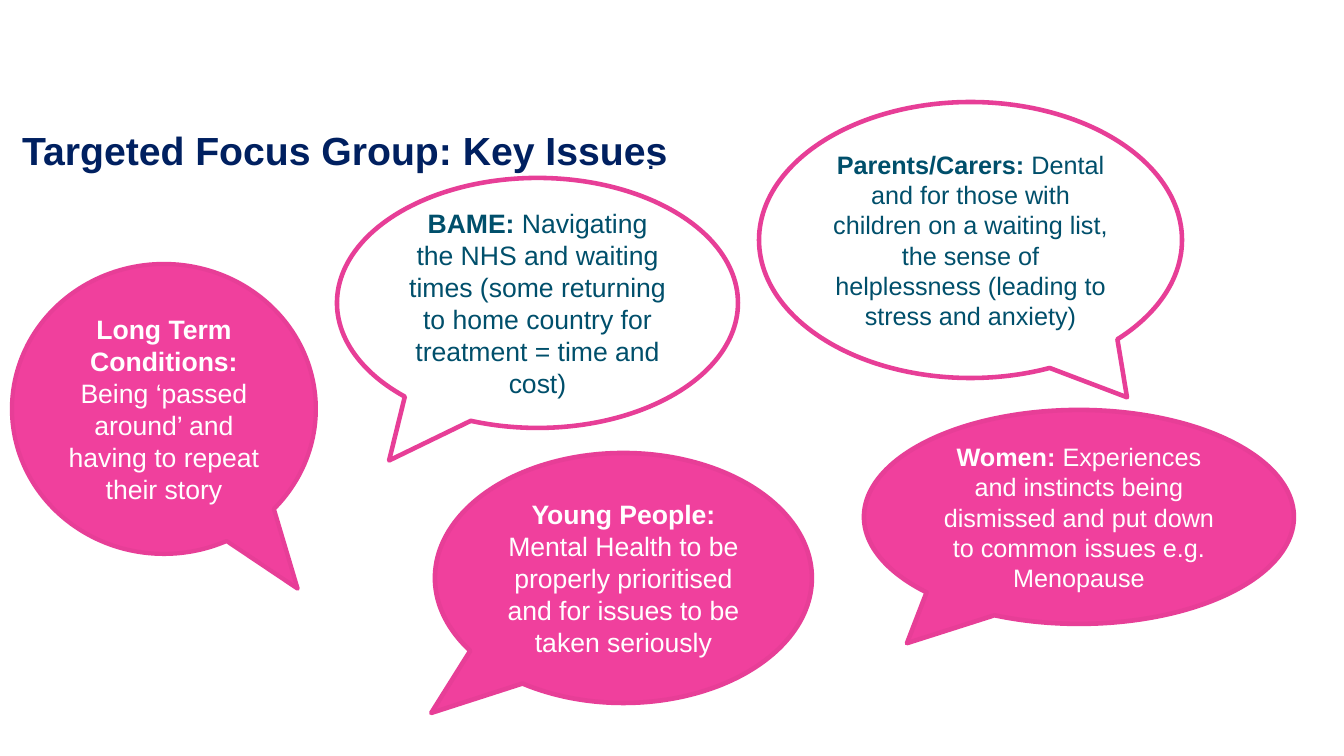
import pptx
import pptx.dml.color
import pptx.enum.shapes
import pptx.enum.text
import pptx.util

SCALE = 914400 / 100.8
NAVY, TEAL, WHITE = "002060", "004F6B", "FFFFFF"
PINK, EDGE = "F0409D", "E73E97"
ALIGN = pptx.enum.text.PP_ALIGN
ANCHOR = pptx.enum.text.MSO_ANCHOR

# Head, body, box, tail point, size, fill, edge width
BUBBLES = [
    ("Women: ", "Experiences and instincts being dismissed and put down to "
     "common issues e.g. Menopause",
     (864, 410, 430, 214), (-0.4, 0.59), 18, PINK, 3.25),
    ("Long Term Conditions: ", "Being ‘passed around’ and having to repeat "
     "their story",
     (12, 264, 304, 290), (0.44, 0.62), 19, PINK, 3),
    ("BAME: ", "Navigating the NHS and waiting times (some returning to home "
     "country for treatment = time and cost)",
     (337, 178, 401, 250), (-0.37, 0.63), 19, None, 3.25),
    ("Young People: ", "Mental Health to be properly prioritised and for "
     "issues to be taken seriously",
     (435, 453, 377, 250), (-0.51, 0.54), 19, PINK, 3.25),
    ("Parents/Carers: ", "Dental and for those with children on a waiting "
     "list, the sense of helplessness (leading to stress and anxiety)",
     (759, 102, 423, 276), (0.37, 0.57), 18, None, 3.25),
]


def px(n):
    return pptx.util.Emu(round(n * SCALE))


def rgb(code):
    return pptx.dml.color.RGBColor.from_string(code)


def style(run, size, color, bold, face="Arial"):
    run.font.name = face
    run.font.size = pptx.util.Pt(size)
    run.font.bold = bold
    run.font.color.rgb = rgb(color)


def add_title(slide, text, box):
    title = slide.shapes.title
    title.left, title.top, title.width, title.height = map(px, box)
    frame = title.text_frame
    frame.text = text
    frame.vertical_anchor = ANCHOR.MIDDLE
    para = frame.paragraphs[0]
    para.alignment = ALIGN.LEFT
    para.line_spacing = 0.9
    style(para.runs[0], 28, NAVY, True)


def add_dot(slide, box):
    frame = slide.shapes.add_textbox(*map(px, box)).text_frame
    frame.word_wrap = True
    frame.margin_top = 0
    frame.text = "."
    para = frame.paragraphs[0]
    para.alignment = ALIGN.CENTER
    style(para.runs[0], 19, NAVY, True, "Manrope")


def add_bubble(slide, head, body, box, tail, size, fill, edge):
    kind = pptx.enum.shapes.MSO_SHAPE.OVAL_CALLOUT
    shape = slide.shapes.add_shape(kind, *map(px, box))
    shape.adjustments[0], shape.adjustments[1] = tail
    shape.shadow.inherit = False
    if fill:
        shape.fill.solid()
        shape.fill.fore_color.rgb = rgb(fill)
    else:
        shape.fill.background()
    shape.line.color.rgb = rgb(EDGE)
    shape.line.width = pptx.util.Pt(edge)

    # Bold group name, then its issue
    frame = shape.text_frame
    frame.word_wrap = True
    frame.vertical_anchor = ANCHOR.MIDDLE
    para = frame.paragraphs[0]
    para.alignment = ALIGN.CENTER
    for text, bold in ((head, True), (body, False)):
        run = para.add_run()
        run.text = text
        style(run, size, WHITE if fill else TEAL, bold)


def main():
    deck = pptx.Presentation()
    deck.slide_width, deck.slide_height = px(1344), px(756)
    slide = deck.slides.add_slide(deck.slide_layouts[5])

    # Heading
    add_title(slide, "Targeted Focus Group: Key Issues", (12, 98, 1294, 110))
    add_dot(slide, (4, 143, 1294, 40))

    # Speech bubbles
    for bubble in BUBBLES:
        add_bubble(slide, *bubble)

    deck.save("out.pptx")


if __name__ == "__main__":
    main()
